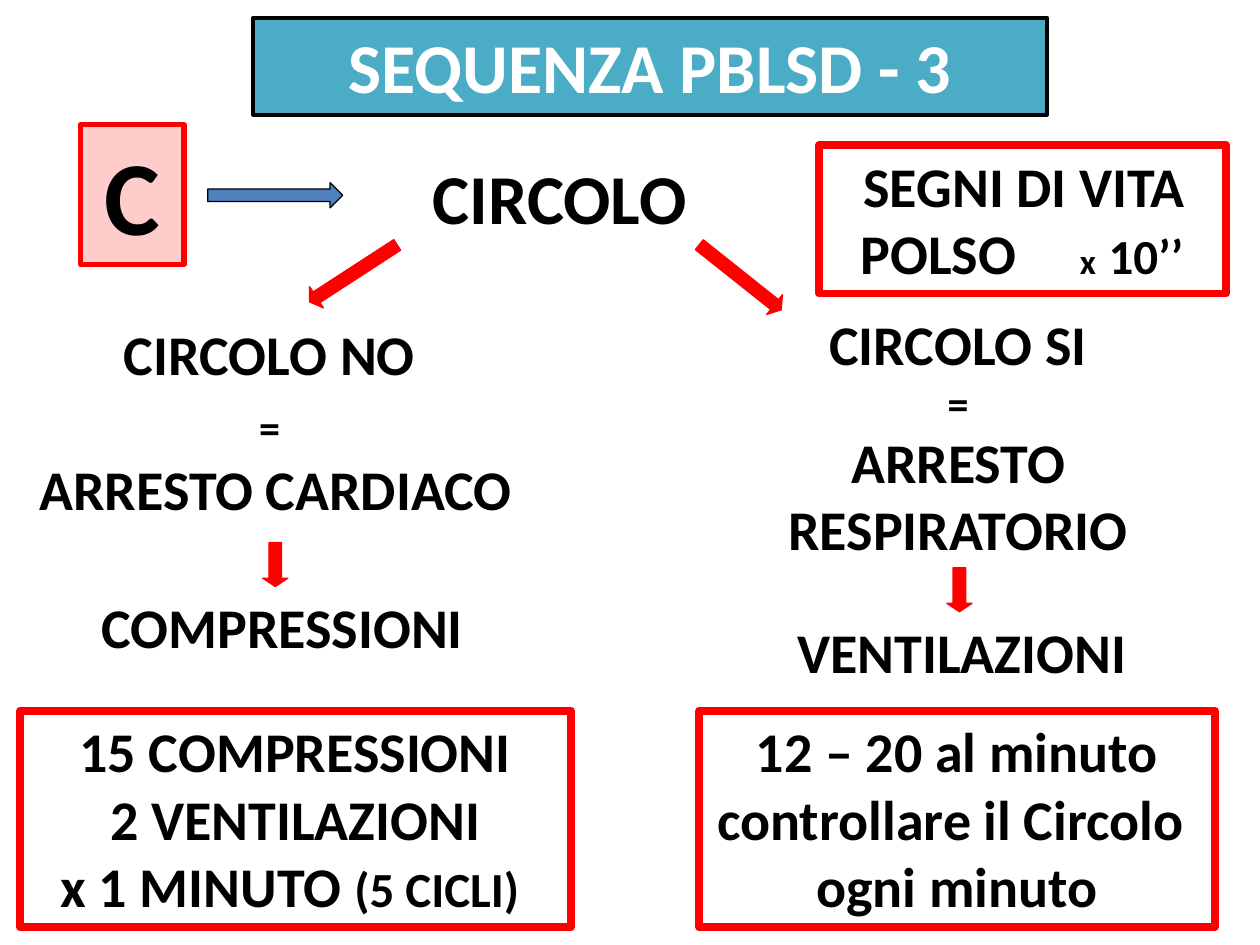
"""Build the PBLSD circulation slide: a two-branch decision flow with action boxes."""
from dataclasses import dataclass
from typing import NamedTuple, Optional

from lxml import etree
from pptx import Presentation
from pptx import util as u
from pptx.dml.color import RGBColor
from pptx.enum import shapes, text
from pptx.oxml.ns import qn

PX = 9144


@dataclass(frozen=True)
class Theme:
    font: str = "Calibri"
    ink: str = "000000"
    white: str = "FFFFFF"
    red: str = "FF0000"
    pink: str = "FFCCCC"
    teal: str = "4BACC6"
    blue: str = "4F81BD"
    letter: int = 60
    heading: int = 40
    body: int = 32
    detail: int = 28
    sign: int = 24
    small: int = 20


THEME = Theme()


class Run(NamedTuple):
    words: str
    size: int = THEME.body


class Box(NamedTuple):
    left: int
    top: int
    width: int
    height: int


class Outline(NamedTuple):
    color: str
    weight: float


class Line(NamedTuple):
    runs: tuple[Run, ...]
    tab: Optional[int] = None


@dataclass(frozen=True)
class Panel:
    box: Box
    lines: tuple[Line, ...]
    outline: Optional[Outline] = None
    fill: Optional[str] = None
    color: str = THEME.ink
    side_insets: tuple[int, int] = (5, 5)


@dataclass(frozen=True)
class Arrow:
    box: Box
    rotation: float = 0
    kind: shapes.MSO_SHAPE = shapes.MSO_SHAPE.LEFT_ARROW
    head: float = 0.333
    fill: str = THEME.red
    edge: str = THEME.red


def line(words: str, size: int = THEME.body) -> Line:
    """Return a line set in one size."""
    return Line((Run(words, size),))


def emu(box: Box) -> list[u.Emu]:
    """Convert a box from px to EMU."""
    return [u.Emu(length * PX) for length in box]


def paint(shape, fill: Optional[str], outline: Optional[Outline]) -> None:
    """Set the fill and outline of a shape."""
    if fill:
        shape.fill.solid()
        shape.fill.fore_color.rgb = RGBColor.from_string(fill)
    else:
        shape.fill.background()
    if outline:
        shape.line.color.rgb = RGBColor.from_string(outline.color)
        shape.line.width = u.Pt(outline.weight)


def write_line(paragraph, content: Line, color: str) -> None:
    """Write one line, left-aligned when it has a tab stop and centred otherwise."""
    paragraph.alignment = text.PP_ALIGN.CENTER
    if content.tab:
        paragraph.alignment = text.PP_ALIGN.LEFT
        stops = etree.SubElement(paragraph._p.get_or_add_pPr(), qn("a:tabLst"))
        etree.SubElement(stops, qn("a:tab"), pos=str(content.tab * PX), algn="l")
    font = paragraph.font
    font.name, font.bold = THEME.font, True
    font.color.rgb = RGBColor.from_string(color)
    uniform = len({run.size for run in content.runs}) == 1
    if uniform:
        font.size = u.Pt(content.runs[0].size)
    for part in content.runs:
        run = paragraph.add_run()
        run.text = part.words
        if not uniform:
            run.font.size = u.Pt(part.size)


def write_panel(shape, panel: Panel) -> None:
    """Paint a shape and fill it with the lines of a panel."""
    paint(shape, panel.fill, panel.outline)
    frame = shape.text_frame
    frame.word_wrap = True
    frame.auto_size = text.MSO_AUTO_SIZE.NONE
    frame.vertical_anchor = text.MSO_ANCHOR.TOP
    frame.margin_top = frame.margin_bottom = u.Emu(5 * PX)
    frame.margin_left, frame.margin_right = (u.Emu(i * PX) for i in panel.side_insets)
    for index, content in enumerate(panel.lines):
        paragraph = frame.add_paragraph() if index else frame.paragraphs[0]
        write_line(paragraph, content, panel.color)


def add_panel(slide, panel: Panel) -> None:
    """Add a framed rectangle, or a plain text box when there is no outline."""
    if panel.outline:
        shape = slide.shapes.add_shape(shapes.MSO_SHAPE.RECTANGLE, *emu(panel.box))
        shape.shadow.inherit = False
    else:
        shape = slide.shapes.add_textbox(*emu(panel.box))
    write_panel(shape, panel)


def add_arrow(slide, arrow: Arrow) -> None:
    """Add a rotated block arrow."""
    shape = slide.shapes.add_shape(arrow.kind, *emu(arrow.box))
    shape.shadow.inherit = False
    shape.adjustments[0], shape.adjustments[1] = 0.5, arrow.head
    shape.rotation = arrow.rotation
    paint(shape, arrow.fill, Outline(arrow.edge, 0.75))


FRAME = Outline(THEME.red, 4.5)
TITLE = Panel(Box(201, 14, 630, 77), (line("SEQUENZA PBLSD - 3", THEME.heading),),
              Outline(THEME.ink, 2.25), THEME.teal, THEME.white)
PANELS = (
    Panel(Box(650, 115, 323, 118),
          (line("SEGNI DI VITA"),
           Line((Run("POLSO\t"), Run("x", THEME.small), Run(" "),
                 Run("10’’", THEME.detail)), tab=174)),
          FRAME, side_insets=(33, 30)),
    Panel(Box(64, 99, 82, 111), (line("C", THEME.letter),),
          Outline(THEME.red, 3), THEME.pink),
    Panel(Box(272, 118, 344, 77), (line("CIRCOLO", THEME.heading),)),
    Panel(Box(16, 249, 406, 172),
          (line("CIRCOLO NO "), Line((Run("=", THEME.sign), Run(" "))),
           line("ARRESTO CARDIACO"))),
    Panel(Box(74, 465, 300, 64), (line("COMPRESSIONI"),)),
    Panel(Box(16, 564, 437, 172),
          (line("15 COMPRESSIONI"), line("2 VENTILAZIONI"),
           Line((Run("x 1 MINUTO "), Run("(5 CICLI) ", THEME.detail)))), FRAME),
    Panel(Box(534, 241, 453, 212),
          (line("CIRCOLO SI"), line("=", THEME.sign), line("ARRESTO RESPIRATORIO"))),
    Panel(Box(602, 485, 323, 64), (line("VENTILAZIONI"),)),
    Panel(Box(555, 564, 409, 172),
          (line("12 – 20 al minuto"), line("controllare il Circolo "),
           line("ogni minuto")), FRAME),
)
ARROWS = (
    Arrow(Box(165, 145, 107, 20), kind=shapes.MSO_SHAPE.RIGHT_ARROW, head=0.5,
          fill=THEME.blue, edge=THEME.ink),
    Arrow(Box(239, 207, 83, 20), 327),
    Arrow(Box(546, 210, 83, 20), 218.5),
    Arrow(Box(201, 438, 35, 20), 270),
    Arrow(Box(744, 458, 35, 20), 270),
)


def main() -> None:
    """Build and save the slide."""
    deck = Presentation()
    deck.slide_width, deck.slide_height = u.Emu(1000 * PX), u.Emu(750 * PX)
    slide = deck.slides.add_slide(deck.slide_layouts[5])
    title = slide.shapes.title
    title.left, title.top, title.width, title.height = emu(TITLE.box)
    write_panel(title, TITLE)
    for panel in PANELS:
        add_panel(slide, panel)
    for arrow in ARROWS:
        add_arrow(slide, arrow)
    deck.save("out.pptx")


if __name__ == "__main__":
    main()
